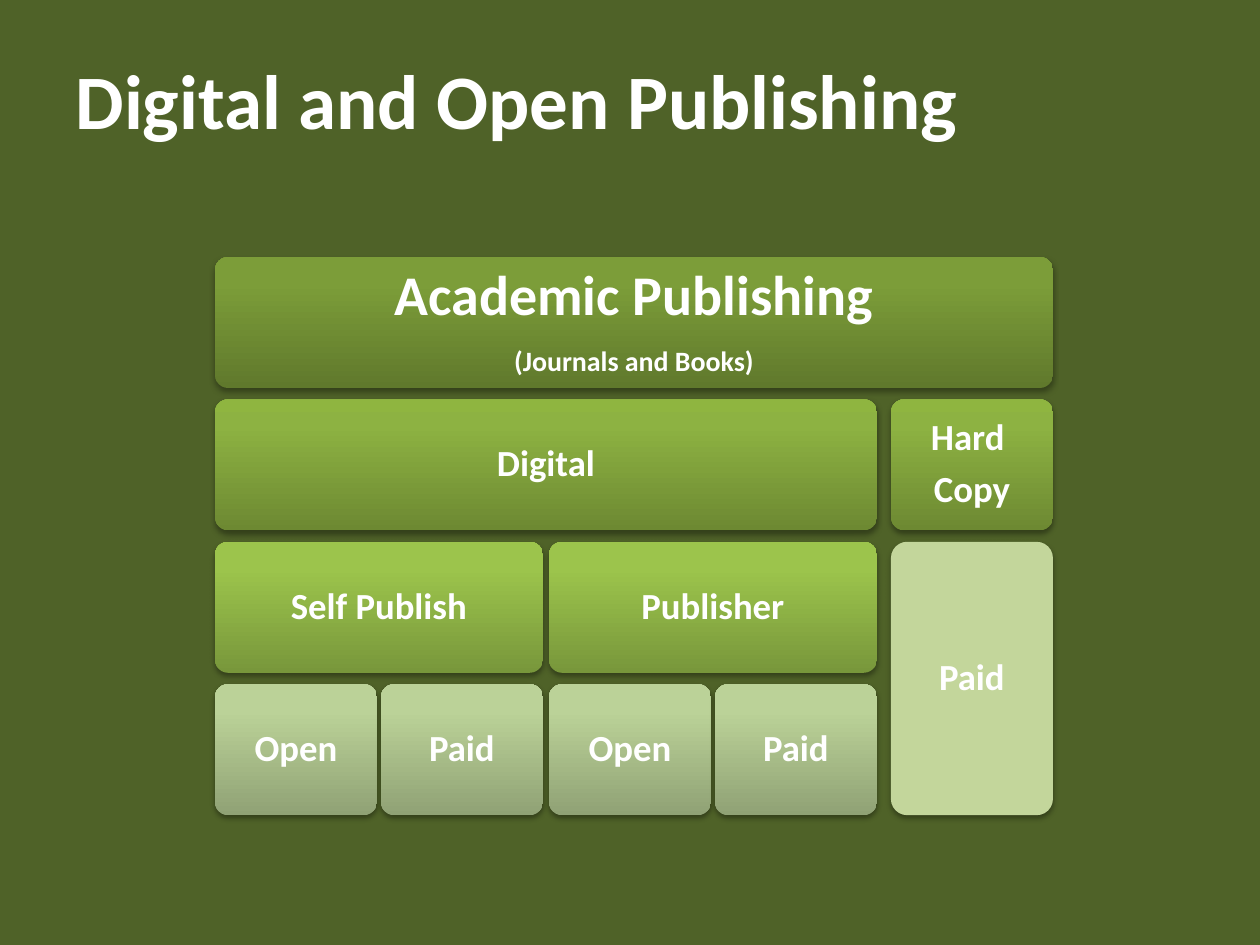
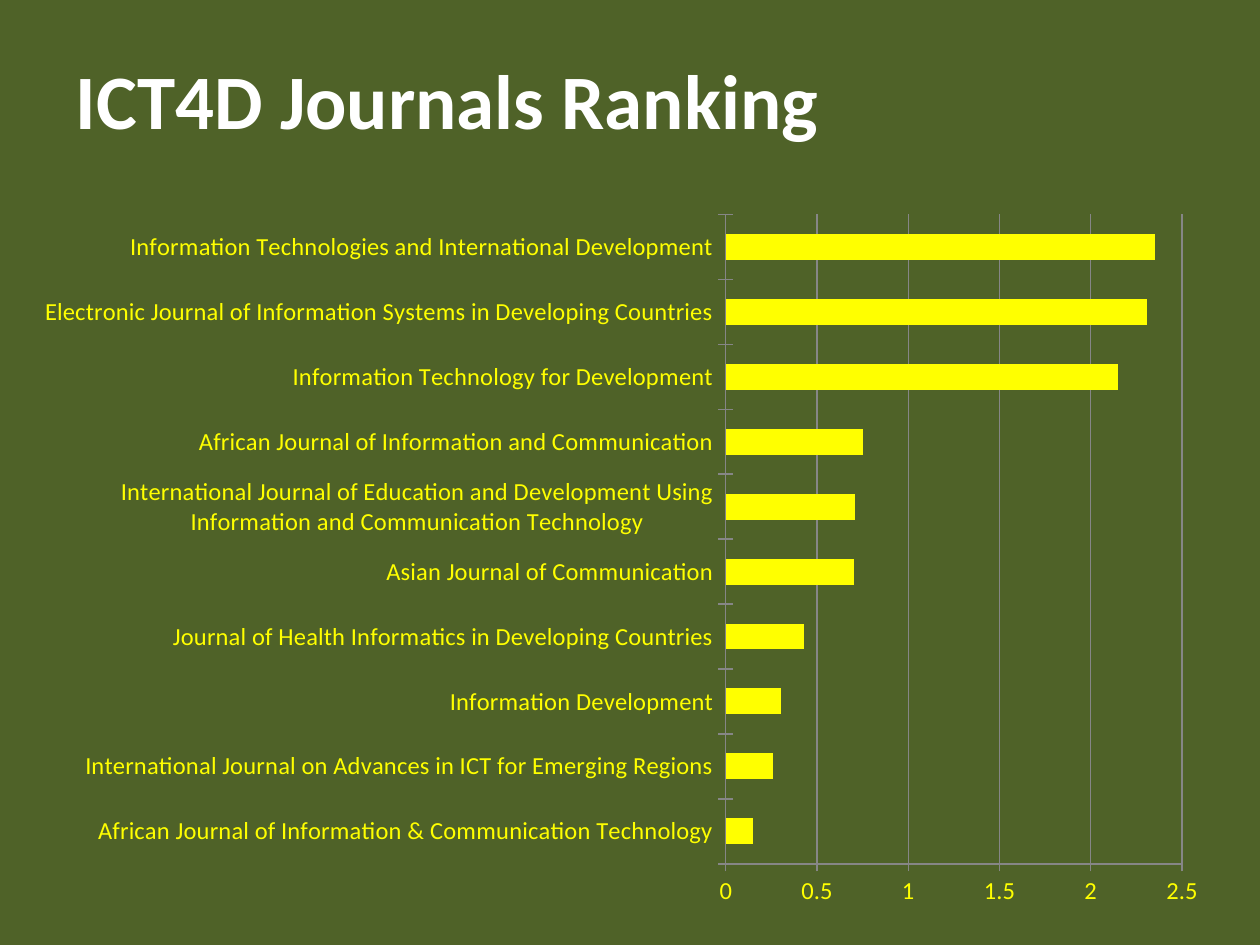
from copy import deepcopy

from lxml import etree
from pptx import Presentation
from pptx import util as u
from pptx.chart.data import CategoryChartData
from pptx.dml.color import RGBColor
from pptx.enum import chart as charts, shapes, text
from pptx.oxml.ns import qn

# Shared style
PX = 914400 / 126
FONT = "Calibri"
BACKGROUND, WHITE, YELLOW, GREY = "4F6228", "FFFFFF", "FFFF00", "868686"
TITLE_BOX = (63, 20, 1134, 158)

# Block fills: gradient colours from bottom to top, or a single colour
TOP = ("60792C", "7C9D39", "7D9F38")
MEDIUM = ("6D8932", "8DB242", "8FB540")
MAKER = ("78973B", "9CC44C", "9DC74A")
ACCESS = ("90A275", "BBD298", "BDD498")
HARD_COPY_ACCESS = ("C3D69B",)
STOP_POSITIONS = (0, 0.8, 1)

# Publishing blocks: lines of (text, size), first and last column, first and last row, fill
PUBLISHING_TITLE = "Digital and Open Publishing"
BLOCKS = [
    ([("Academic Publishing", 32), ("(Journals and Books)", 16)], 0, 4, 0, 0, TOP),
    ([("Digital", 21)], 0, 3, 1, 1, MEDIUM),
    ([("Self Publish", 21)], 0, 1, 2, 2, MAKER),
    ([("Open", 21)], 0, 0, 3, 3, ACCESS),
    ([("Paid", 21)], 1, 1, 3, 3, ACCESS),
    ([("Publisher", 21)], 2, 3, 2, 2, MAKER),
    ([("Open", 21)], 2, 2, 3, 3, ACCESS),
    ([("Paid", 21)], 3, 3, 3, 3, ACCESS),
    ([("Hard ", 21), ("Copy", 21)], 4, 4, 1, 1, MEDIUM),
    ([("Paid", 21)], 4, 4, 2, 3, HARD_COPY_ACCESS),
]
GRID_LEFT, GRID_TOP = 215, 257
BLOCK_WIDTH, BLOCK_HEIGHT, ROW_PITCH = 162, 131, 142.4
COLUMN_GAPS = (4, 6, 4, 14)

# Journal ranking, from the bottom bar to the top one
RANKING_TITLE = "ICT4D Journals Ranking"
CHART_BOX = (21, 200, 1201, 721)
JOURNALS = [
    ("African Journal of Information & Communication Technology", 0.15),
    ("International Journal on Advances in ICT for Emerging Regions", 0.26),
    ("Information Development", 0.3),
    ("Journal of Health Informatics in Developing Countries", 0.43),
    ("Asian Journal of Communication", 0.7),
    ("International Journal of Education and Development Using "
     "Information and Communication Technology", 0.71),
    ("African Journal of Information and Communication", 0.75),
    ("Information Technology for Development", 2.15),
    ("Electronic Journal of Information Systems in Developing Countries", 2.31),
    ("Information Technologies and International Development", 2.35),
]


def color(value):
    return RGBColor.from_string(value)


def emu(box):
    return [round(length * PX) for length in box]


def set_font(font, size, hex_color, bold=False):
    font.name, font.size, font.bold = FONT, u.Pt(size), bold
    font.color.rgb = color(hex_color)


def add_titled_slide(presentation, title_text):
    slide = presentation.slides.add_slide(presentation.slide_layouts[5])
    title = slide.shapes.title
    title.left, title.top, title.width, title.height = emu(TITLE_BOX)
    title.text_frame.text = title_text
    title.text_frame.vertical_anchor = text.MSO_ANCHOR.MIDDLE
    paragraph = title.text_frame.paragraphs[0]
    paragraph.alignment = text.PP_ALIGN.LEFT
    set_font(paragraph.font, 44, WHITE, bold=True)
    return slide


def fill_block(shape, colors):
    fill = shape.fill
    if len(colors) == 1:
        fill.solid()
        fill.fore_color.rgb = color(colors[0])
        return
    fill.gradient()
    fill.gradient_angle = 90
    stop_list = shape._element.spPr.find(qn("a:gradFill")).find(qn("a:gsLst"))
    stop_list.append(deepcopy(stop_list[-1]))
    for stop, position, hex_color in zip(fill.gradient_stops, STOP_POSITIONS, colors):
        stop.position = position
        stop.color.rgb = color(hex_color)


def add_shadow(shape):
    shape.shadow.inherit = False
    effects = shape._element.spPr.find(qn("a:effectLst"))
    shadow = etree.SubElement(effects, qn("a:outerShdw"), blurRad="40000", dist="23000",
                              dir="5400000", rotWithShape="0")
    shade = etree.SubElement(shadow, qn("a:srgbClr"), val="000000")
    etree.SubElement(shade, qn("a:alpha"), val="35000")


def block_box(first_column, last_column, first_row, last_row):
    def column_left(column):
        return GRID_LEFT + column * BLOCK_WIDTH + sum(COLUMN_GAPS[:column])

    left, top = column_left(first_column), GRID_TOP + first_row * ROW_PITCH
    width = column_left(last_column) + BLOCK_WIDTH - left
    height = (last_row - first_row) * ROW_PITCH + BLOCK_HEIGHT
    return left, top, width, height


def add_block(slide, lines, first_column, last_column, first_row, last_row, colors):
    box = block_box(first_column, last_column, first_row, last_row)
    shape = slide.shapes.add_shape(shapes.MSO_SHAPE.ROUNDED_RECTANGLE, *emu(box))
    shape.adjustments[0] = 0.1
    fill_block(shape, colors)
    shape.line.fill.background()
    add_shadow(shape)
    frame = shape.text_frame
    frame.word_wrap = True
    frame.vertical_anchor = text.MSO_ANCHOR.MIDDLE
    frame.margin_left = frame.margin_right = frame.margin_top = frame.margin_bottom = round(11 * PX)
    frame.text = "\n".join(line for line, _ in lines)
    for paragraph, (_, size) in zip(frame.paragraphs, lines):
        paragraph.alignment = text.PP_ALIGN.CENTER
        paragraph.line_spacing = 0.9
        paragraph.space_after = u.Pt(round(0.35 * size))
        set_font(paragraph.font, size, WHITE, bold=True)


def add_ranking_chart(slide):
    data = CategoryChartData()
    data.categories = [journal for journal, _ in JOURNALS]
    data.add_series("Series 1", [score for _, score in JOURNALS])
    chart = slide.shapes.add_chart(charts.XL_CHART_TYPE.BAR_CLUSTERED, *emu(CHART_BOX), data).chart
    chart.has_legend = chart.has_title = False
    set_font(chart.font, 14, YELLOW)
    plot = chart.plots[0]
    plot.gap_width = 150
    plot.vary_by_categories = False
    bars = plot.series[0].format.fill
    bars.solid()
    bars.fore_color.rgb = color(YELLOW)
    chart.category_axis.has_major_gridlines = False
    chart.value_axis.has_major_gridlines = True
    for axis in (chart.category_axis, chart.value_axis):
        axis.major_tick_mark = charts.XL_TICK_MARK.CROSS
        axis.minor_tick_mark = charts.XL_TICK_MARK.NONE
        axis.format.line.color.rgb = color(GREY)
    chart.value_axis.major_gridlines.format.line.color.rgb = color(GREY)


def main():
    presentation = Presentation()
    presentation.slide_width, presentation.slide_height = emu((1260, 945))
    background = presentation.slide_master.background.fill
    background.solid()
    background.fore_color.rgb = color(BACKGROUND)

    # Publishing hierarchy
    slide = add_titled_slide(presentation, PUBLISHING_TITLE)
    for block in BLOCKS:
        add_block(slide, *block)

    # Journal ranking
    slide = add_titled_slide(presentation, RANKING_TITLE)
    add_ranking_chart(slide)

    presentation.save("out.pptx")


if __name__ == "__main__":
    main()
